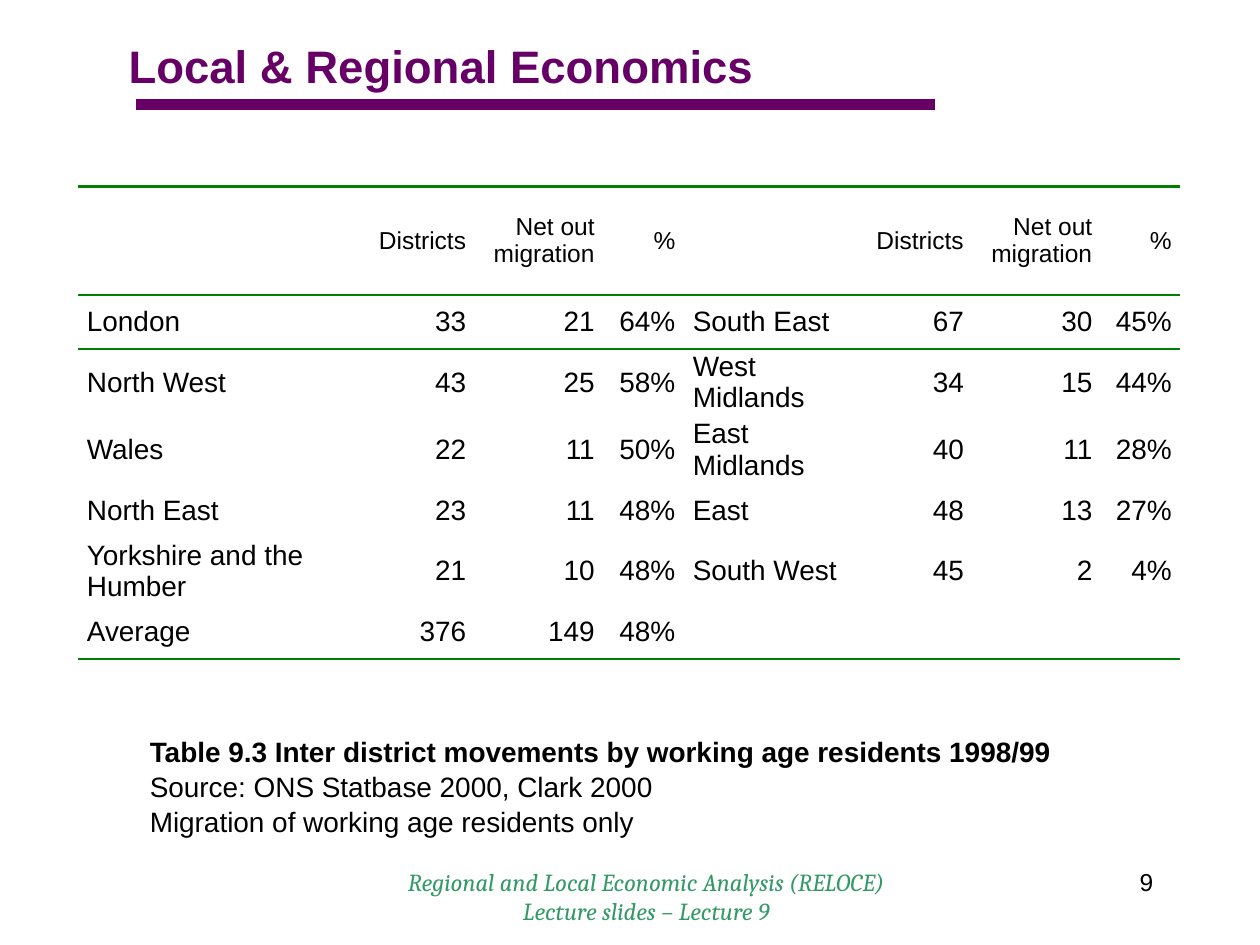
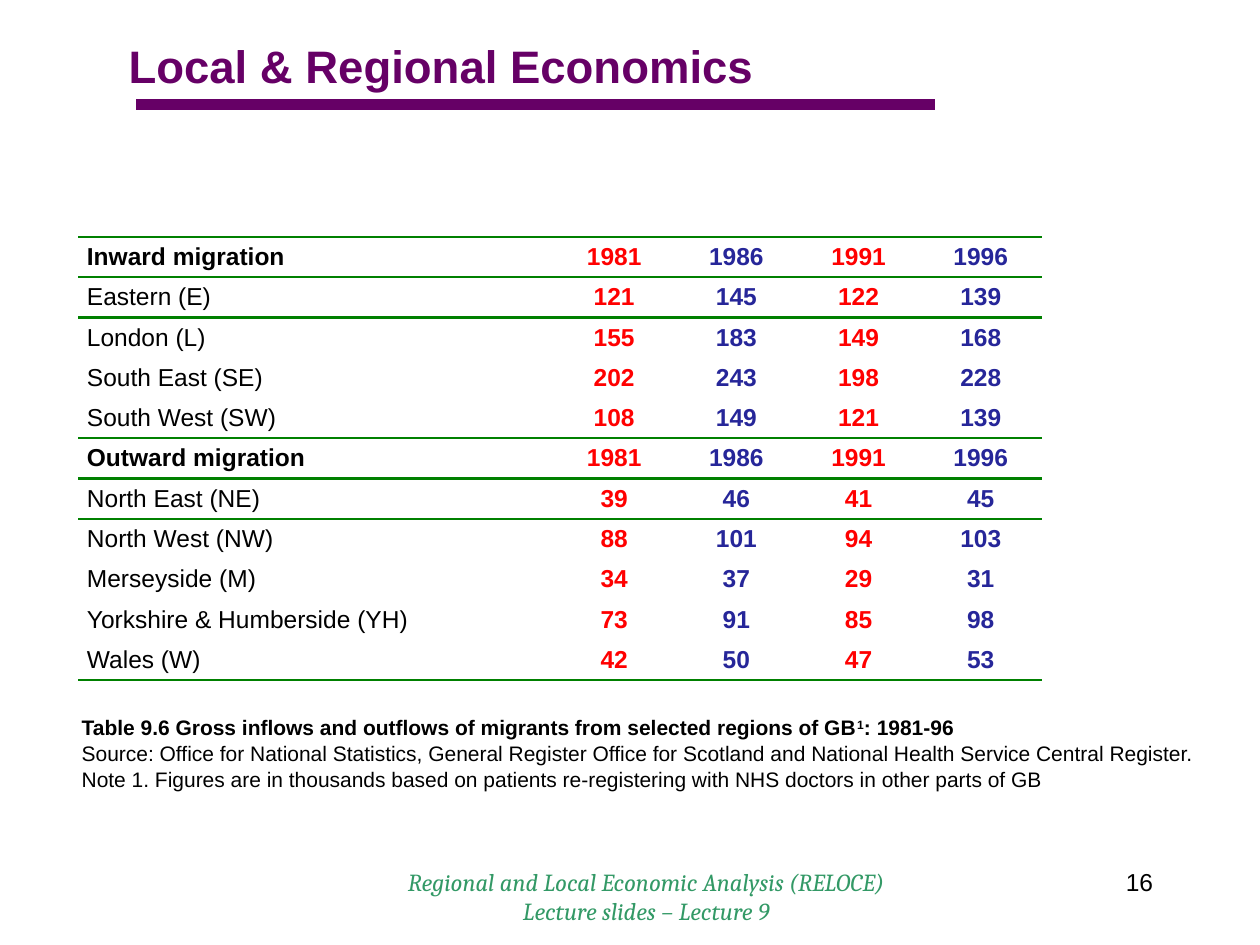
from dataclasses import dataclass

from lxml import etree
from pptx import Presentation
from pptx.dml.color import RGBColor
from pptx.enum import shapes, text
from pptx.oxml import ns
from pptx.util import Inches, Pt


@dataclass(frozen=True)
class Theme:
    sans: str = "Arial"
    serif: str = "Cambria"
    purple: str = "660066"
    footer_green: str = "339966"
    rule_green: str = "008000"
    black: str = "000000"
    red: str = "FF0000"
    blue: str = "262699"
    title: int = 26
    body: int = 16
    small: int = 14
    note: int = 12


T = Theme()
LEFT, CENTER, RIGHT = text.PP_ALIGN.LEFT, text.PP_ALIGN.CENTER, text.PP_ALIGN.RIGHT
NO_STYLE = "{2D5ABB26-0587-4C30-8999-92F81FD0307C}"


def add_run(p, words, size, color=T.black, bold=False, font=T.sans):
    r = p.add_run()
    r.text = words
    r.font.name, r.font.size, r.font.bold = font, Pt(size), bold
    r.font.color.rgb = RGBColor.from_string(color)
    return r


def add_table(s, left, top, widths, heights, rows, rules, style):
    """Draw rows; rules maps a row edge to a line width, style(row, col) gives align, size, colour, bold."""
    table = s.shapes.add_table(len(rows), len(widths), Inches(left), Inches(top),
                               Inches(sum(widths)), Inches(sum(heights))).table
    table.first_row = table.horz_banding = False
    table._tbl.tblPr.find(ns.qn("a:tableStyleId")).text = NO_STYLE
    for col, width in zip(table.columns, widths):
        col.width = Inches(width)
    for i, (row, height) in enumerate(zip(rows, heights)):
        table.rows[i].height = Inches(height)
        for j, words in enumerate(row):
            cell = table.cell(i, j)
            cell.margin_left = cell.margin_right = Inches(0.07)
            cell.margin_top = cell.margin_bottom = 0
            cell.vertical_anchor = text.MSO_ANCHOR.MIDDLE
            for side, edge in (("a:lnT", i), ("a:lnB", i + 1)):
                if edge in rules:
                    ln = etree.SubElement(cell._tc.get_or_add_tcPr(), ns.qn(side), w=str(Pt(rules[edge])))
                    fill = etree.SubElement(ln, ns.qn("a:solidFill"))
                    etree.SubElement(fill, ns.qn("a:srgbClr"), val=T.rule_green)
            cell.fill.background()
            if words:
                align, size, color, bold = style(i, j)
                p = cell.text_frame.paragraphs[0]
                p.alignment = align
                add_run(p, words, size, color, bold)


prs = Presentation()
prs.slide_width, prs.slide_height = Inches(10), Inches(7.5)

captions = [
    (9, (1.09, 5.78, 7.45, 0.91), T.body, [
        ["Table 9.3 Inter district movements by working age residents 1998/99"],
        ["Source: ONS Statbase 2000, Clark 2000"],
        ["Migration of working age residents only"],
    ]),
    (16, (0.55, 5.62, 9.1, 0.71), T.note, [
        ["Table 9.6 Gross inflows and outflows of migrants from selected regions of GB", "1", ": 1981-96"],
        ["Source: Office for National Statistics, General Register Office for Scotland and "
         "National Health Service Central Register."],
        ["Note 1. Figures are in thousands based on patients re-registering with NHS doctors "
         "in other parts of GB"],
    ]),
]

for number, caption_box, caption_size, lines in captions:
    s = prs.slides.add_slide(prs.slide_layouts[5])

    # Title and the bar under it
    title = s.shapes.title
    title.left, title.top, title.width, title.height = map(Inches, (0.92, 0.25, 6.67, 0.54))
    tf = title.text_frame
    tf.word_wrap = True
    tf.auto_size = text.MSO_AUTO_SIZE.NONE
    tf.vertical_anchor = text.MSO_ANCHOR.TOP
    p = tf.paragraphs[0]
    p.alignment = LEFT
    add_run(p, "Local & Regional Economics", T.title, T.purple, True)

    bar = s.shapes.add_connector(shapes.MSO_CONNECTOR.STRAIGHT, Inches(1.08), Inches(0.83),
                                 Inches(7.42), Inches(0.83))
    bar.line.color.rgb = RGBColor.from_string(T.purple)
    bar.line.width = Pt(6)
    etree.SubElement(bar._element.spPr, ns.qn("a:effectLst"))

    # Footer and slide number
    for left, width, align, words, color, font in (
        (2.92, 4.42, CENTER, "Regional and Local Economic Analysis (RELOCE) Lecture slides – Lecture 9",
         T.footer_green, T.serif),
        (7.17, 2.08, RIGHT, str(number), T.black, T.sans),
    ):
        tf = s.shapes.add_textbox(Inches(left), Inches(6.83), Inches(width), Inches(0.5)).text_frame
        tf.word_wrap = True
        p = tf.paragraphs[0]
        p.alignment = align
        r = add_run(p, words, T.small, color, font=font)
        r.font.italic = font == T.serif

    # Caption: bold first line, raised note mark
    tf = s.shapes.add_textbox(*map(Inches, caption_box)).text_frame
    tf.word_wrap = True
    tf.vertical_anchor = text.MSO_ANCHOR.MIDDLE
    for i, parts in enumerate(lines):
        p = tf.add_paragraph() if i else tf.paragraphs[0]
        p.line_spacing = 1.04
        for part in parts:
            r = add_run(p, part, caption_size, bold=i == 0)
            if part == "1":
                r._r.get_or_add_rPr().set("baseline", "30000")

districts_slide, flows_slide = prs.slides

# Net out migration by region, in two halves side by side
half_head = ["", "Districts", "Net out migration", "%"]
district_rows = [
    half_head * 2,
    ["London", "33", "21", "64%", "South East", "67", "30", "45%"],
    ["North West", "43", "25", "58%", "West Midlands", "34", "15", "44%"],
    ["Wales", "22", "11", "50%", "East Midlands", "40", "11", "28%"],
    ["North East", "23", "11", "48%", "East", "48", "13", "27%"],
    ["Yorkshire and the Humber", "21", "10", "48%", "South West", "45", "2", "4%"],
    ["Average", "376", "149", "48%", "", "", "", ""],
]
add_table(districts_slide, 0.62, 1.48, [2.26, 0.89, 1.02, 0.64, 1.4, 0.89, 1.02, 0.63],
          [0.86] + [0.43] * 6, district_rows, {0: 1.5, 1: 1, 7: 1.5},
          lambda i, j: (RIGHT if j % 4 else LEFT, T.body if i else T.small, T.black, False))

# Gross flows by year, inward then outward
years = ["1981", "1986", "1991", "1996"]
flow_rows = [
    ["Inward migration", *years],
    ["Eastern (E)", "121", "145", "122", "139"],
    ["London (L)", "155", "183", "149", "168"],
    ["South East (SE)", "202", "243", "198", "228"],
    ["South West (SW)", "108", "149", "121", "139"],
    ["Outward migration", *years],
    ["North East (NE)", "39", "46", "41", "45"],
    ["North West (NW)", "88", "101", "94", "103"],
    ["Merseyside (M)", "34", "37", "29", "31"],
    ["Yorkshire & Humberside (YH)", "73", "91", "85", "98"],
    ["Wales (W)", "42", "50", "47", "53"],
]
year_colors = [T.black] + [T.red, T.blue] * 2
add_table(flows_slide, 0.62, 1.88, [3.77] + [0.97] * 4, [0.32] * len(flow_rows), flow_rows,
          dict.fromkeys((0, 1, 5, 6, 11), 1.5),
          lambda i, j: (CENTER if j else LEFT, T.small, year_colors[j], j > 0 or i in (0, 5)))

prs.save("out.pptx")
